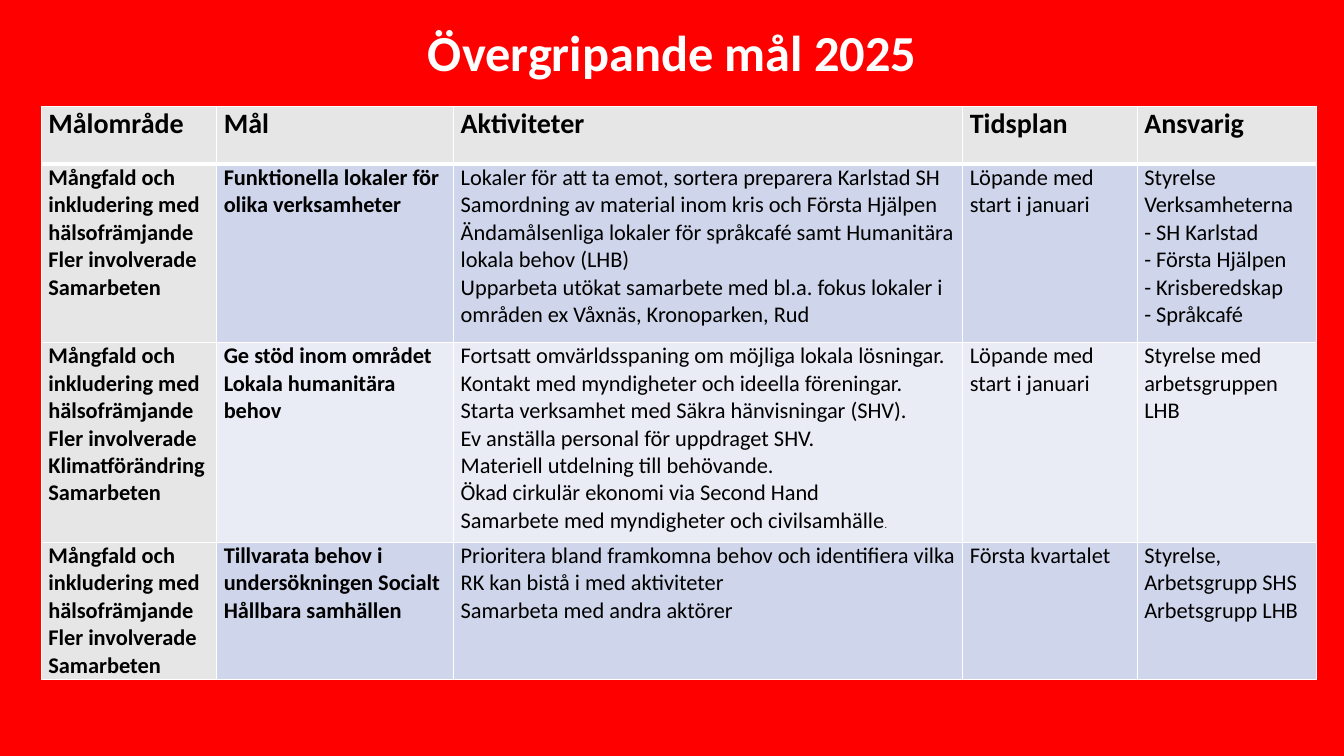
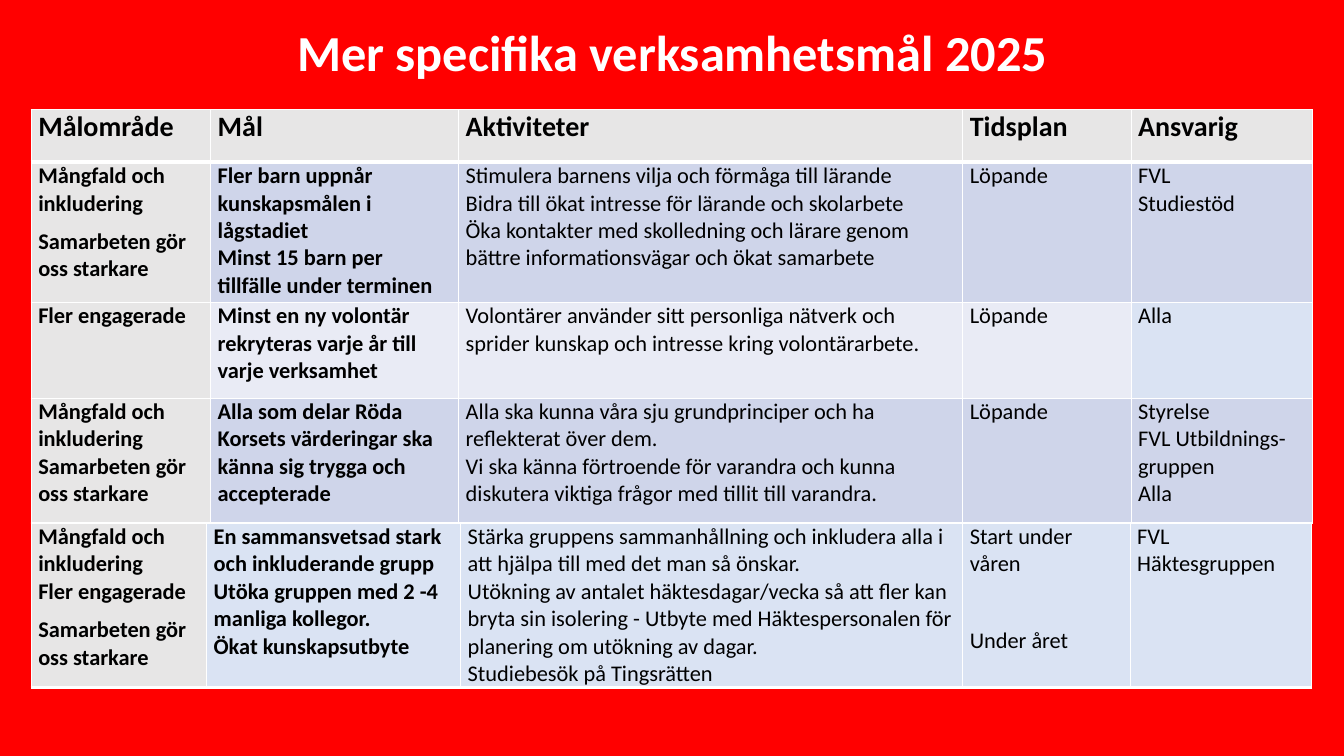
import copy

import pptx
import pptx.dml.color
import pptx.enum.text
import pptx.oxml.ns
import pptx.util
from lxml import etree

Inches = pptx.util.Inches
Pt = pptx.util.Pt
RGBColor = pptx.dml.color.RGBColor
qn = pptx.oxml.ns.qn

# Shared look
FONT = "Calibri"
RED = RGBColor(0xFF, 0x00, 0x00)
WHITE = RGBColor(0xFF, 0xFF, 0xFF)
BLACK = RGBColor(0x00, 0x00, 0x00)
GREY = RGBColor(0xE7, 0xE6, 0xE6)
BAND_DARK = RGBColor(0xCF, 0xD5, 0xEA)
BAND_LIGHT = RGBColor(0xE9, 0xEB, 0xF5)
PALE_BLUE = RGBColor(0xDA, 0xE3, 0xF3)
HEADER_SIZE, BODY_SIZE = 20, 16
THIN, THICK = 1, 3

# Table content: \v breaks a line, \n starts a new paragraph
HEADER = ("Målområde", "Mål", "Aktiviteter", "Tidsplan", "Ansvarig")

OVERALL_GOALS = [
    ("Mångfald och inkludering med hälsofrämjande\vFler involverade\vSamarbeten",
     "Funktionella lokaler för olika verksamheter",
     "Lokaler för att ta emot, sortera preparera Karlstad SH\v"
     "Samordning av material inom kris och Första Hjälpen\v"
     "Ändamålsenliga lokaler för språkcafé samt Humanitära lokala behov (LHB)\v"
     "Upparbeta utökat samarbete med bl.a. fokus lokaler i områden ex Våxnäs, "
     "Kronoparken, Rud",
     "Löpande med start i januari",
     "Styrelse Verksamheterna\v- SH Karlstad\v- Första Hjälpen\v"
     "- Krisberedskap\v- Språkcafé"),
    ("Mångfald och inkludering med hälsofrämjande\vFler involverade\v"
     "Klimatförändring\vSamarbeten",
     "Ge stöd inom området Lokala humanitära behov",
     "Fortsatt omvärldsspaning om möjliga lokala lösningar.\v"
     "Kontakt med myndigheter och ideella föreningar.\v"
     "Starta verksamhet med Säkra hänvisningar (SHV).\v"
     "Ev anställa personal för uppdraget SHV.\v"
     "Materiell utdelning till behövande.\v"
     "Ökad cirkulär ekonomi via Second Hand\v"
     "Samarbete med myndigheter och civilsamhälle",
     "Löpande med start i januari",
     "Styrelse med arbetsgruppen LHB"),
    ("Mångfald och inkludering med hälsofrämjande\vFler involverade\vSamarbeten",
     "Tillvarata behov i undersökningen Socialt Hållbara samhällen",
     "Prioritera bland framkomna behov och identifiera vilka RK kan bistå i med "
     "aktiviteter\vSamarbeta med andra aktörer",
     "Första kvartalet",
     "Styrelse,\vArbetsgrupp SHS\vArbetsgrupp LHB"),
]

SPECIFIC_GOALS = [
    ("Mångfald och inkludering\nSamarbeten gör oss starkare",
     "Fler barn uppnår kunskapsmålen i lågstadiet\v"
     "Minst 15 barn per tillfälle under terminen",
     "Stimulera barnens vilja och förmåga till lärande\v"
     "Bidra till ökat intresse för lärande och skolarbete\v"
     "Öka kontakter med skolledning och lärare genom bättre informationsvägar "
     "och ökat samarbete",
     "Löpande",
     "FVL\vStudiestöd"),
    ("Fler engagerade",
     "Minst en ny volontär rekryteras varje år till varje verksamhet",
     "Volontärer använder sitt personliga nätverk och sprider kunskap och "
     "intresse kring volontärarbete.",
     "Löpande",
     "Alla"),
    ("Mångfald och inkludering\vSamarbeten gör oss starkare",
     "Alla som delar Röda Korsets värderingar ska känna sig trygga och accepterade",
     "Alla ska kunna våra sju grundprinciper och ha reflekterat över dem.\v"
     "Vi ska känna förtroende för varandra och kunna diskutera viktiga frågor "
     "med tillit till varandra.",
     "Löpande",
     "Styrelse\vFVL Utbildnings-gruppen\vAlla"),
]

GROUP_GOALS = [
    ("Mångfald och inkludering\vFler engagerade\nSamarbeten gör oss starkare",
     "En sammansvetsad stark och inkluderande grupp\v"
     "Utöka gruppen med 2 -4 manliga kollegor.\vÖkat kunskapsutbyte",
     "Stärka gruppens sammanhållning och inkludera alla i att hjälpa till med "
     "det man så önskar.\v"
     "Utökning av antalet häktesdagar/vecka så att fler kan bryta sin isolering "
     "- Utbyte med Häktespersonalen för planering om utökning av dagar.\v"
     "Studiebesök på Tingsrätten",
     "Start under våren\nUnder året",
     "FVL\vHäktesgruppen"),
]


def format_run(run, size, bold, color=BLACK):
    run.font.name = FONT
    run.font.size = Pt(size)
    run.font.bold = bold
    run.font.color.rgb = color


def fill_cell_text(cell, text, size, bold):
    cell.margin_left = cell.margin_right = Inches(0.07)
    cell.margin_top = cell.margin_bottom = 0
    cell.text_frame.text = text
    paragraphs = cell.text_frame.paragraphs
    for paragraph in paragraphs:
        for run in paragraph.runs:
            format_run(run, size, bold)
        # Line breaks take the size of the text around them
        for line_break in paragraph._p.findall(qn("a:br")):
            line_break.append(copy.deepcopy(paragraph.runs[0]._r.rPr))
    for paragraph in paragraphs[:-1]:
        paragraph.space_after = Pt(8)


def set_borders(cell, top, bottom):
    properties = cell._tc.get_or_add_tcPr()
    for side, width in (("L", THIN), ("R", THIN), ("T", top), ("B", bottom)):
        line = etree.SubElement(properties, qn(f"a:ln{side}"), w=str(Pt(width)))
        solid = etree.SubElement(line, qn("a:solidFill"))
        etree.SubElement(solid, qn("a:srgbClr"), val=str(WHITE))


def add_goal_table(slide, left, top, widths, heights, rows, bands,
                   has_header=True, bottom_line=THIN):
    if has_header:
        rows = [HEADER] + rows
        bands = [GREY] + bands
    frame = slide.shapes.add_table(
        len(rows), len(widths), Inches(left), Inches(top),
        Inches(sum(widths)), Inches(sum(heights)))
    table = frame.table
    table.first_row = table.horz_banding = False
    for column, width in zip(table.columns, widths):
        column.width = Inches(width)
    for row, height in zip(table.rows, heights):
        row.height = Inches(height)

    last = len(rows) - 1
    for i, texts in enumerate(rows):
        is_header = has_header and i == 0
        top_line = THICK if has_header and i == 1 else THIN
        lower_line = THICK if is_header else bottom_line if i == last else THIN
        for j, text in enumerate(texts):
            cell = table.cell(i, j)
            fill_cell_text(cell, text, HEADER_SIZE if is_header else BODY_SIZE,
                           is_header or j < 2)
            set_borders(cell, top_line, lower_line)
            cell.fill.solid()
            cell.fill.fore_color.rgb = GREY if j == 0 else bands[i]
    return table


def add_titled_slide(presentation, title):
    slide = presentation.slides.add_slide(presentation.slide_layouts[6])
    slide.background.fill.solid()
    slide.background.fill.fore_color.rgb = RED
    box = slide.shapes.add_textbox(Inches(0.92), Inches(0.11),
                                   Inches(11.5), Inches(0.8))
    frame = box.text_frame
    frame.word_wrap = True
    frame.vertical_anchor = pptx.enum.text.MSO_ANCHOR.MIDDLE
    frame.text = title
    paragraph = frame.paragraphs[0]
    paragraph.alignment = pptx.enum.text.PP_ALIGN.CENTER
    format_run(paragraph.runs[0], 36, True, WHITE)
    return slide


def add_overall_slide(presentation):
    slide = add_titled_slide(presentation, "Övergripande mål 2025")
    table = add_goal_table(
        slide, 0.41, 1.06, [1.74, 2.35, 5.05, 1.73, 1.78],
        [0.57, 1.77, 1.98, 1.36], OVERALL_GOALS,
        [BAND_DARK, BAND_LIGHT, BAND_DARK])
    # Small closing full stop
    full_stop = table.cell(2, 2).text_frame.paragraphs[0].add_run()
    full_stop.text = "."
    format_run(full_stop, 7, False)


def add_specific_slide(presentation):
    slide = add_titled_slide(presentation, "Mer specifika verksamhetsmål 2025")
    table = add_goal_table(
        slide, 0.31, 1.09, [1.78, 2.46, 5, 1.67, 1.8],
        [0.52, 1.39, 0.95, 1.24], SPECIFIC_GOALS,
        [BAND_DARK, BAND_LIGHT, BAND_DARK])
    table.cell(2, 4).fill.fore_color.rgb = PALE_BLUE

    group_table = add_goal_table(
        slide, 0.31, 5.19, [1.74, 2.52, 4.98, 1.66, 1.8], [1.63],
        GROUP_GOALS, [PALE_BLUE], has_header=False, bottom_line=THICK)
    # The second date stands one line further down
    group_table.cell(0, 3).text_frame.paragraphs[1].space_before = Pt(27.5)


def main():
    presentation = pptx.Presentation()
    presentation.slide_width = Inches(13.33)
    presentation.slide_height = Inches(7.5)
    add_overall_slide(presentation)
    add_specific_slide(presentation)
    presentation.save("out.pptx")


if __name__ == "__main__":
    main()
